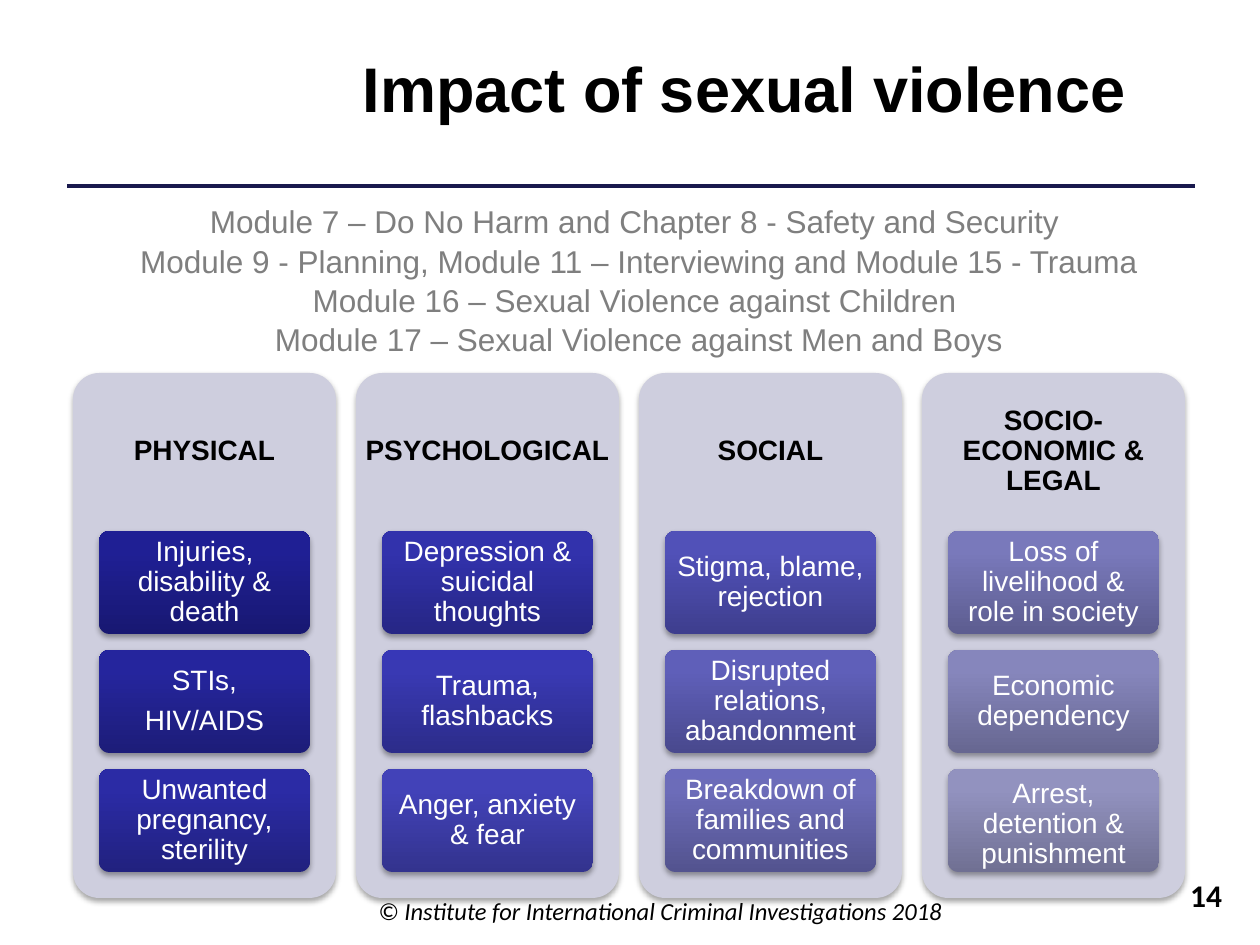
from copy import deepcopy

from lxml import etree
from pptx import Presentation
from pptx.dml.color import RGBColor
from pptx.enum.shapes import MSO_CONNECTOR, MSO_SHAPE
from pptx.enum.text import MSO_ANCHOR, PP_ALIGN
from pptx.oxml import parse_xml
from pptx.oxml.ns import qn
from pptx.util import Pt

PX = 7257
CENTER, RIGHT = PP_ALIGN.CENTER, PP_ALIGN.RIGHT
TOP, MIDDLE = MSO_ANCHOR.TOP, MSO_ANCHOR.MIDDLE
ROUNDED = MSO_SHAPE.ROUNDED_RECTANGLE
STRAIGHT = MSO_CONNECTOR.STRAIGHT
SHADOW = (
    '<a:outerShdw xmlns:a="http://schemas.openxmlformats.org/drawingml/2006/main"'
    ' blurRad="40000" dist="23000" dir="5400000" rotWithShape="0">'
    '<a:srgbClr val="000000"><a:alpha val="35000"/></a:srgbClr></a:outerShdw>'
)

MODULES = [
    "Module 7 – Do No Harm and Chapter 8 - Safety and Security ",
    "Module 9 - Planning, Module 11 – Interviewing and Module 15 - Trauma",
    "Module 16 – Sexual Violence against Children ",
    "Module 17 – Sexual Violence against Men and Boys",
]
COLUMNS = [
    ("PHYSICAL", [
        (["Injuries, disability & death"], ["181872", "1F1F94", "1D1D97"]),
        (["STIs,", "HIV/AIDS"], ["1D1D79", "25259D", "2323A0"]),
        (["Unwanted pregnancy, sterility"], ["21217F", "2B2BA5", "2929A8"]),
    ]),
    ("PSYCHOLOGICAL", [
        (["Depression & suicidal thoughts"], ["262685", "3232AC", "3030AF"]),
        (["Trauma, flashbacks"], ["2C2C8A", "3939B3", "3737B7"]),
        (["Anger, anxiety & fear"], ["33338E", "4242B8", "4040BB"]),
    ]),
    ("SOCIAL", [
        (["Stigma, blame, rejection"], ["3E3E8E", "5151B8", "4F4FBB"]),
        (["Disrupted relations, abandonment"], ["49498E", "5F5FB9", "5D5DBB"]),
        (["Breakdown of families and communities"], ["53538F", "6C6CB9", "6B6BBC"]),
    ]),
    ("SOCIO-ECONOMIC & LEGAL", [
        (["Loss of livelihood & role in society"], ["5D5D90", "7979BB", "7878BD"]),
        (["Economic dependency"], ["676791", "8686BC", "8585BE"]),
        (["Arrest, detention & punishment"], ["707093", "9292BF", "9191C0"]),
    ]),
]


def write(shape, lines, size, color, font="Arial", bold=False, italic=False,
          align=CENTER, anchor=TOP, spacing=1.0, after=0, insets=(13, 6)):
    frame = shape.text_frame
    frame.word_wrap = True
    frame.vertical_anchor = anchor
    frame.margin_left = frame.margin_right = insets[0] * PX
    frame.margin_top = frame.margin_bottom = insets[1] * PX
    for index, line in enumerate(lines):
        paragraph = frame.add_paragraph() if index else frame.paragraphs[0]
        paragraph.alignment = align
        paragraph.line_spacing = spacing
        paragraph.space_after = Pt(after)
        run = paragraph.add_run()
        run.text = line
        run.font.name = font
        run.font.size = Pt(size)
        run.font.bold = bold
        run.font.italic = italic
        run.font.color.rgb = RGBColor.from_string(color)


def add_panel(left, top, width, height):
    shape = slide.shapes.add_shape(ROUNDED, left * PX, top * PX, width * PX, height * PX)
    shape.adjustments[0] = 0.1
    shape.line.fill.background()
    shape.shadow.inherit = False
    shape._element.spPr.find(qn("a:effectLst")).append(parse_xml(SHADOW))
    return shape


presentation = Presentation()
presentation.slide_width = 1260 * PX
presentation.slide_height = 945 * PX
slide = presentation.slides.add_slide(presentation.slide_layouts[5])

rule = slide.shapes.add_connector(STRAIGHT, 1195 * PX, 186 * PX, 67 * PX, 186 * PX)
rule.line.color.rgb = RGBColor.from_string("19194D")
rule.line.width = Pt(2.5)
etree.SubElement(rule._element.spPr, qn("a:effectLst"))

title = slide.shapes.title
title.left, title.top, title.width, title.height = 292 * PX, 43 * PX, 905 * PX, 88 * PX
write(title, ["Impact of sexual violence"], 36, "000000", bold=True, anchor=MIDDLE)

footer = slide.shapes.add_textbox(343 * PX, 890 * PX, 635 * PX, 37 * PX)
write(footer, ["© Institute for International Criminal Investigations 2018"], 14, "000000",
      font="Calibri", italic=True)

page_number = slide.shapes.add_textbox(1166 * PX, 870 * PX, 69 * PX, 57 * PX)
write(page_number, ["14"], 18, "000000", font="Calibri", bold=True, align=RIGHT)

modules = slide.shapes.add_textbox(64 * PX, 195 * PX, 1150 * PX, 204 * PX)
write(modules, MODULES, 18, "7F7F7F", spacing=1.04)

for column, (heading, cards) in enumerate(COLUMNS):
    left = 73 + 283 * column
    panel = add_panel(left, 373, 263, 525)
    panel.fill.solid()
    panel.fill.fore_color.rgb = RGBColor.from_string("CECEDE")

    header = slide.shapes.add_textbox(left * PX, 373 * PX, 263 * PX, 157 * PX)
    write(header, [heading], 16, "000000", bold=True, anchor=MIDDLE,
          spacing=0.9, after=5.6, insets=(9, 9))

    for row, (lines, colors) in enumerate(cards):
        card = add_panel(left + 26, 531 + 119 * row, 211, 103)
        card.fill.gradient()
        card.fill.gradient_angle = 90
        stop_list = card._element.spPr.find(".//" + qn("a:gsLst"))
        stop_list.append(deepcopy(stop_list[-1]))
        for stop, position, color in zip(card.fill.gradient_stops, (0, 0.8, 1), colors):
            stop.position = position
            stop.color.rgb = RGBColor.from_string(color)
        write(card, lines, 16, "FFFFFF", anchor=MIDDLE, spacing=0.9, after=5.6, insets=(5, 4))

card.text_frame.margin_top = 12 * PX

presentation.save("out.pptx")
